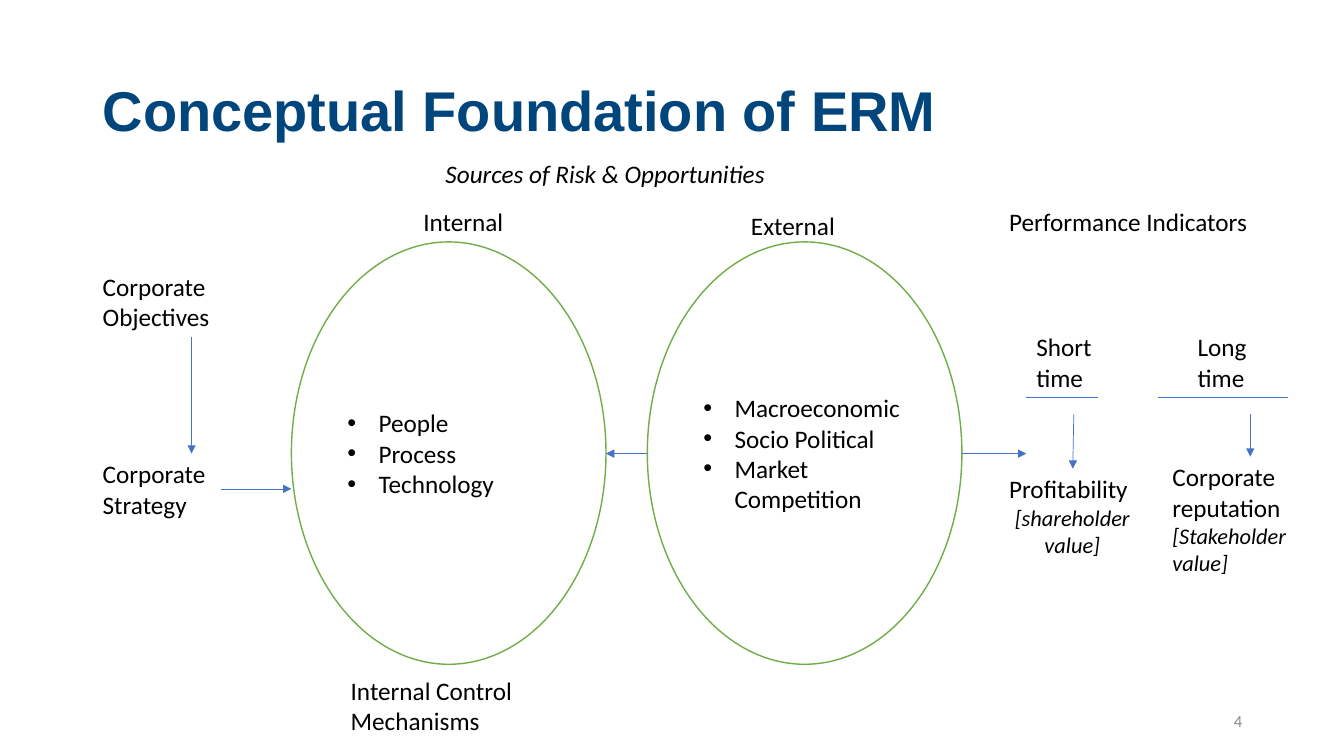
import pptx
import pptx.util
import pptx.dml.color
import pptx.enum.shapes
import pptx.enum.text
import pptx.oxml
import pptx.oxml.ns
from pptx.util import Inches

COLORS = {
    "title": "00457C",
    "text": "000000",
    "page": "8C8C8C",
    "ring": "70AD47",
    "line": "4472C4",
    "back": "FFFFFF",
}
ALIGN = pptx.enum.text.PP_ALIGN
ANCHOR = pptx.enum.text.MSO_ANCHOR


def color(name):
    return pptx.dml.color.RGBColor.from_string(COLORS[name])


def add_run(para, text, size=18, tint="text", face="Calibri", bold=False, slant=False):
    run = para.add_run()
    run.text = text
    font = run.font
    font.name = face
    font.size = pptx.util.Pt(size)
    font.bold = bold
    font.italic = slant
    font.color.rgb = color(tint)


def add_box(slide, left, top, width, height, anchor=ANCHOR.TOP):
    box = slide.shapes.add_textbox(Inches(left), Inches(top), Inches(width), Inches(height))
    frame = box.text_frame
    frame.word_wrap = True
    frame.vertical_anchor = anchor
    return frame


def add_label(slide, text, left, top, width, height=0.71, **style):
    frame = add_box(slide, left, top, width, height)
    add_run(frame.paragraphs[0], text, **style)
    return frame


def add_note(frame, text, align):
    para = frame.add_paragraph()
    para.alignment = align
    add_run(para, text, size=16, slant=True)


def add_bullet(para):
    props = para._p.get_or_add_pPr()
    props.set("marL", str(Inches(0.31)))
    props.set("indent", str(-Inches(0.31)))
    for tag, key, value in (("a:buFont", "typeface", "Arial"), ("a:buChar", "char", "•")):
        pptx.oxml.ns.qn(tag)
        item = pptx.oxml.parse_xml(f'<{tag} {pptx.oxml.ns.nsdecls("a")} {key}="{value}"/>')
        props.append(item)


def add_ring(slide, left, items):
    ring = slide.shapes.add_shape(
        pptx.enum.shapes.MSO_SHAPE.OVAL, Inches(left), Inches(2.4), Inches(3.12), Inches(4.19)
    )
    ring.shadow.inherit = False
    ring.fill.solid()
    ring.fill.fore_color.rgb = color("back")
    ring.line.color.rgb = color("ring")
    ring.line.width = pptx.util.Pt(1)
    frame = ring.text_frame
    frame.word_wrap = True
    frame.vertical_anchor = ANCHOR.MIDDLE
    for index, item in enumerate(items):
        para = frame.add_paragraph() if index else frame.paragraphs[0]
        para.alignment = ALIGN.LEFT
        add_bullet(para)
        add_run(para, item)


def add_line(slide, x1, y1, x2, y2, arrow=True):
    line = slide.shapes.add_connector(
        pptx.enum.shapes.MSO_CONNECTOR.STRAIGHT, Inches(x1), Inches(y1), Inches(x2), Inches(y2)
    )
    line.line.color.rgb = color("line")
    line.line.width = pptx.util.Pt(0.5)
    names = pptx.oxml.ns.nsdecls("a")
    if arrow:
        head = pptx.oxml.parse_xml(f'<a:tailEnd {names} type="triangle"/>')
        line.line._get_or_add_ln().append(head)
    line._element.spPr.append(pptx.oxml.parse_xml(f"<a:effectLst {names}/>"))


def main():
    deck = pptx.Presentation()
    deck.slide_width = Inches(13.33)
    deck.slide_height = Inches(7.5)
    slide = deck.slides.add_slide(deck.slide_layouts[6])

    title = add_box(slide, 0.92, 0.4, 11.5, 1.45, ANCHOR.MIDDLE).paragraphs[0]
    title.line_spacing = 0.9
    add_run(title, "Conceptual Foundation of ERM", 40, "title", "Arial", True)

    add_ring(slide, 2.89, ["People", "Process", "Technology"])
    add_ring(slide, 6.42, ["Macroeconomic", "Socio Political", "Market Competition"])

    add_label(slide, "Sources of Risk & Opportunities", 4.32, 1.52, 3.86, 0.4, slant=True)
    for text, left, top, width, height in (
        ("Internal", 4.1, 2, 1.22, 0.4),
        ("External", 7.35, 2.04, 1.22, 0.4),
        ("Performance Indicators", 9.91, 2, 2.7, 0.4),
        ("Corporate Objectives", 0.92, 2.64, 1.97, 0.71),
        ("Corporate Strategy", 0.92, 4.5, 1.97, 0.71),
        ("Short time", 10.18, 3.24, 1.08, 0.71),
        ("Long time", 11.78, 3.24, 1.08, 0.71),
        ("Internal Control Mechanisms", 3.38, 6.65, 2.13, 0.71),
    ):
        add_label(slide, text, left, top, width, height)

    profit = add_label(slide, "Profitability", 9.91, 4.65, 1.45, 0.94)
    add_note(profit, "[shareholder value]", ALIGN.CENTER)
    repute = add_label(slide, "Corporate reputation", 11.53, 4.53, 1.74, 1.25)
    add_note(repute, "[Stakeholder value]", ALIGN.LEFT)

    for ends in (
        (1.9, 3.34, 1.9, 4.5),
        (2.19, 4.85, 2.89, 4.85),
        (6.42, 4.5, 6.01, 4.5),
        (9.54, 4.5, 10.18, 4.5),
        (10.65, 4.11, 10.64, 4.65),
        (12.4, 4.11, 12.4, 4.53),
    ):
        add_line(slide, *ends)
    for start, end in ((10.18, 10.89), (11.49, 12.77)):
        add_line(slide, start, 3.94, end, 3.94, arrow=False)

    page = add_box(slide, 9.42, 6.95, 3, 0.4, ANCHOR.MIDDLE).paragraphs[0]
    page.alignment = ALIGN.RIGHT
    add_run(page, "4", 12, "page")

    deck.save("out.pptx")


if __name__ == "__main__":
    main()
